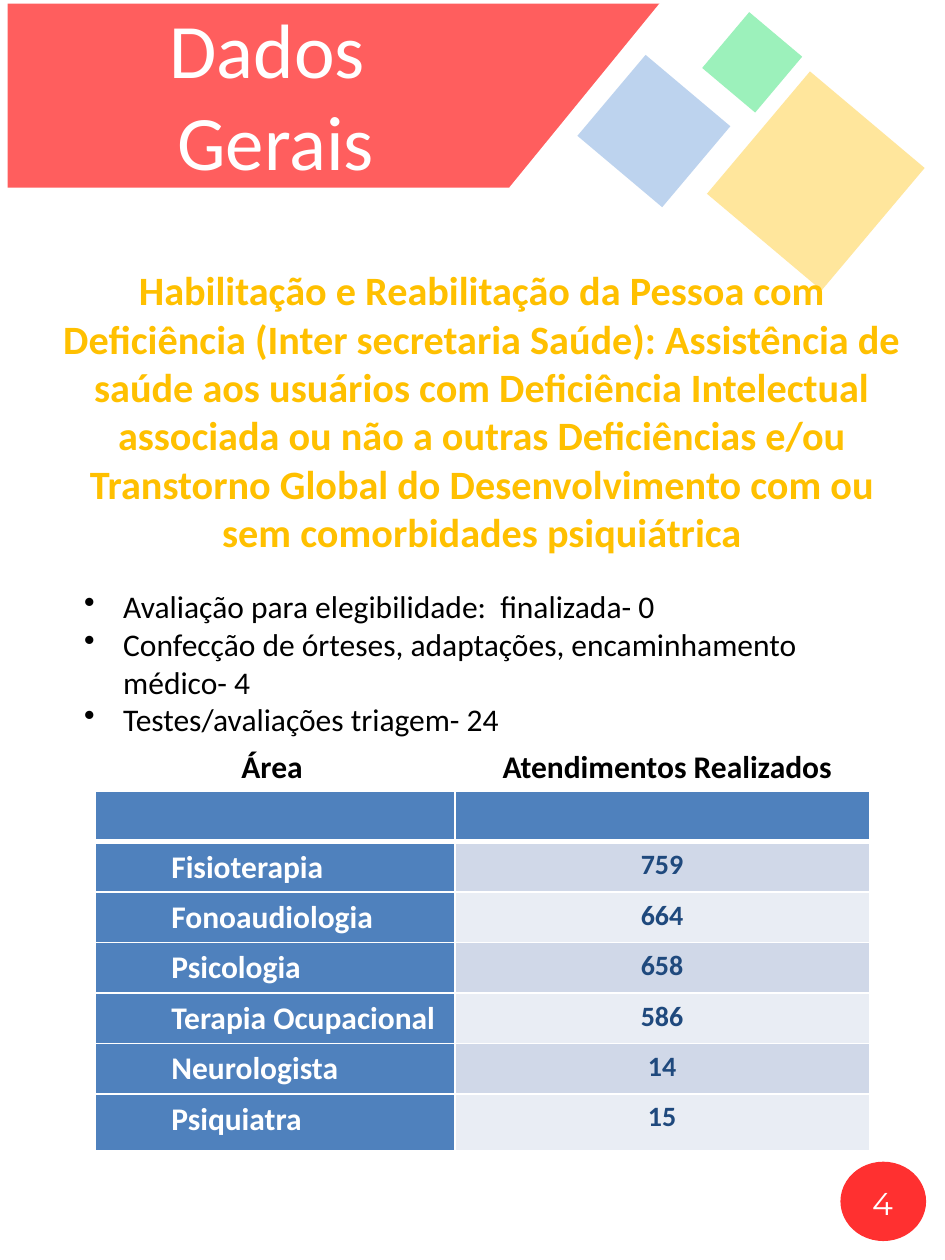
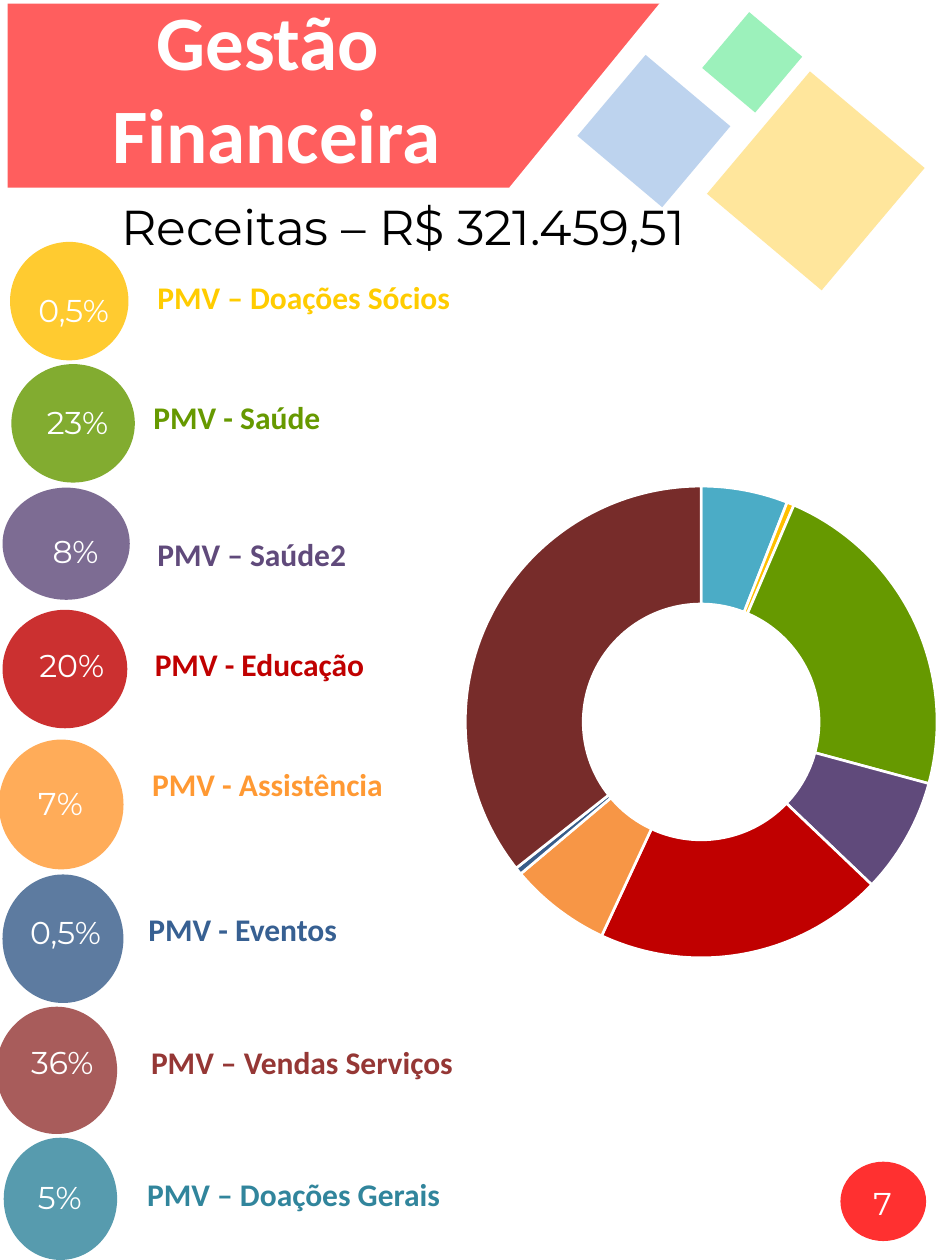
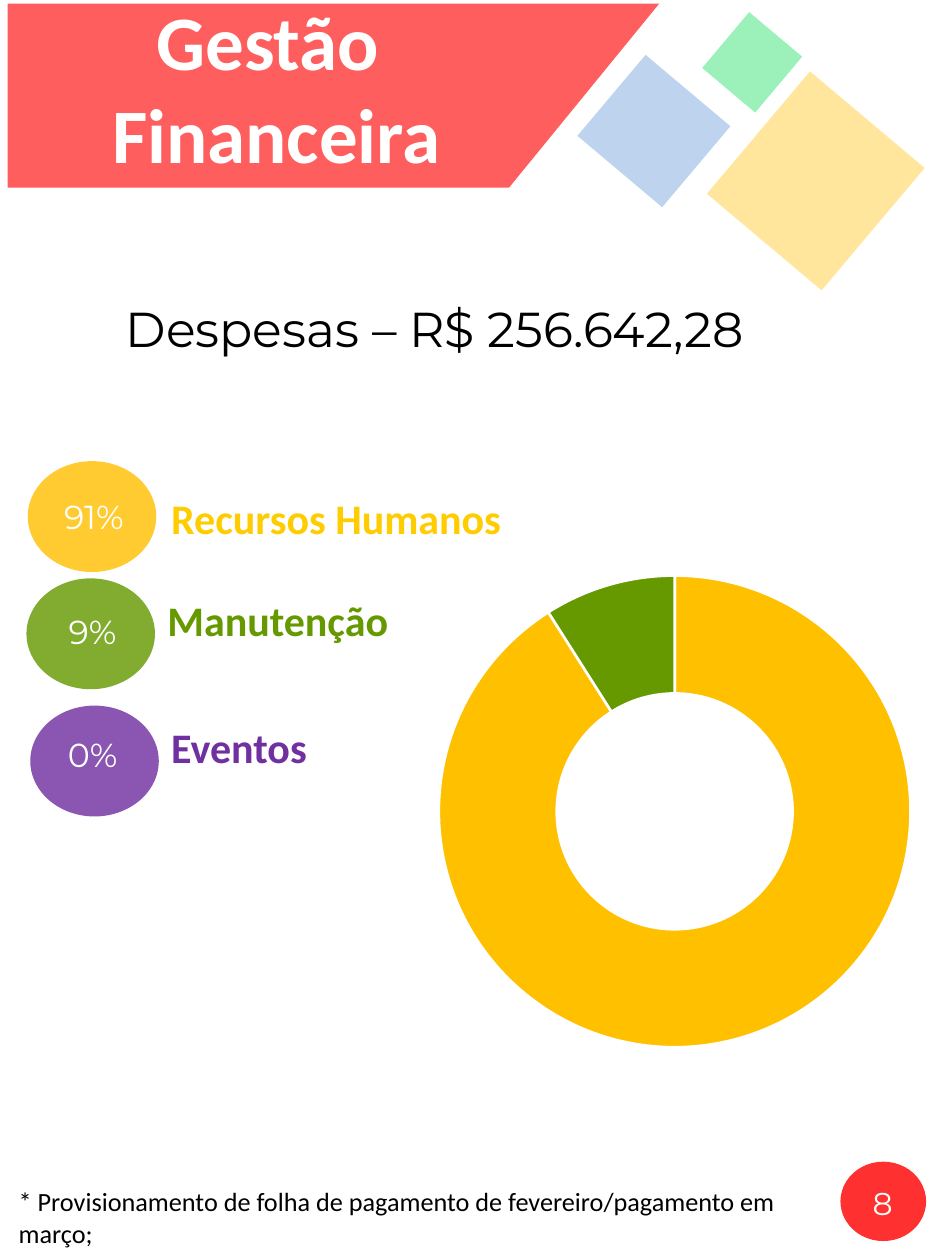
from lxml import etree
from pptx import Presentation
from pptx.chart.data import CategoryChartData
from pptx.dml.color import RGBColor
from pptx.enum.chart import XL_CHART_TYPE
from pptx.enum.shapes import MSO_SHAPE
from pptx.enum.text import MSO_ANCHOR, MSO_AUTO_SIZE, PP_ALIGN
from pptx.oxml.ns import qn
from pptx.util import Inches, Pt

RECT = MSO_SHAPE.RECTANGLE
OVAL = MSO_SHAPE.OVAL
TRIANGLE = MSO_SHAPE.RIGHT_TRIANGLE
DOUGHNUT = XL_CHART_TYPE.DOUGHNUT
LEFT, CENTER = PP_ALIGN.LEFT, PP_ALIGN.CENTER
MIDDLE = MSO_ANCHOR.MIDDLE
GROW, FIXED = MSO_AUTO_SIZE.SHAPE_TO_FIT_TEXT, MSO_AUTO_SIZE.NONE

BODY, DISPLAY = "Calibri", "Montserrat"

WHITE = RGBColor(0xFF, 0xFF, 0xFF)
BLACK = RGBColor(0, 0, 0)
RED = RGBColor(0xFF, 0, 0)
AMBER = RGBColor(0xFF, 0xC0, 0)
YELLOW = RGBColor(0xFF, 0xCC, 0)
MINT = RGBColor(0, 0xDB, 0x50)
SKY = RGBColor(0x55, 0x8E, 0xD5)
GREEN = RGBColor(0x66, 0x99, 0)
PLUM = RGBColor(0x60, 0x4A, 0x7B)
PURPLE = RGBColor(0x70, 0x30, 0xA0)
CRIMSON = RGBColor(0xC0, 0, 0)
ORANGE = RGBColor(0xFF, 0x99, 0x33)
APRICOT = RGBColor(0xF7, 0x96, 0x46)
NAVY = RGBColor(0x38, 0x5D, 0x8A)
BLUE = RGBColor(0x37, 0x60, 0x92)
BRICK = RGBColor(0x95, 0x37, 0x35)
MAROON = RGBColor(0x77, 0x2C, 0x2A)
TEAL = RGBColor(0x31, 0x85, 0x9C)
AQUA = RGBColor(0x4B, 0xAC, 0xC6)
TABLE_BLUE = RGBColor(0x4F, 0x81, 0xBD)
TABLE_TEXT = RGBColor(0x1F, 0x49, 0x7D)
BAND_DARK = RGBColor(0xD0, 0xD8, 0xE8)
BAND_LIGHT = RGBColor(0xE9, 0xED, 0xF4)

DIAMONDS = [
    ((5.84, 0.84, 1.27, 1.19), AMBER),
    ((5.68, 0.22, 0.58, 0.55), MINT),
    ((4.77, 0.6, 0.84, 0.88), SKY),
]

SERVICES = [
    ("Fisioterapia", "759"),
    ("Fonoaudiologia", "664"),
    ("Psicologia", "658"),
    ("Terapia Ocupacional", "586"),
    ("Neurologista", "14"),
    ("Psiquiatra", "15"),
]

INCOME = [
    (AMBER, (0.08, 1.92, 0.94, 0.94), "0,5%", (-0.12, 2.26, 1.41),
     "PMV – Doações Sócios", YELLOW, (1.15, 2.16, 2.55)),
    (GREEN, (0.09, 2.89, 0.98, 0.94), "23%", (0.19, 3.15, 0.85),
     "PMV - Saúde", GREEN, (1.12, 3.11, 1.54)),
    (PLUM, (0.02, 3.87, 1.01, 0.89), "8%", (-0.06, 4.17, 1.32),
     "PMV – Saúde2", PLUM, (1.15, 4.2, 1.72)),
    (CRIMSON, (0.02, 4.84, 0.99, 0.94), "20%", (0.01, 5.08, 1.12),
     "PMV - Educação", CRIMSON, (1.13, 5.07, 1.88)),
    (ORANGE, (-0.01, 5.87, 0.99, 1.03), "7%", (-0.03, 6.17, 1.02),
     "PMV - Assistência", ORANGE, (1.11, 6.02, 2.05)),
    (NAVY, (0.02, 6.94, 0.96, 1.02), "0,5%", (-0.06, 7.2, 1.16),
     "PMV - Eventos", BLUE, (1.08, 7.17, 1.71)),
    (BRICK, (-0.03, 7.99, 0.96, 1.01), "36%", (-0.07, 8.23, 1.13),
     "PMV – Vendas Serviços", BRICK, (1.1, 8.23, 2.62)),
    (TEAL, (0.03, 9.03, 0.9, 0.97), "5%", (-0.09, 9.3, 1.13),
     "PMV – Doações Gerais", TEAL, (1.07, 9.28, 2.55)),
]

EXPENSES = [
    (AMBER, (0.22, 3.66, 1.02, 0.88), "91%", (0.05, 3.89, 1.39),
     "Recursos Humanos", YELLOW, (1.26, 3.86, 2.92)),
    (GREEN, (0.21, 4.59, 1.02, 0.88), "9%", (0.17, 4.8, 1.13),
     "Manutenção", GREEN, (1.23, 4.67, 1.97)),
    (PURPLE, (0.24, 5.6, 1.02, 0.88), "0%", (0.17, 5.78, 1.13),
     "Eventos", PURPLE, (1.26, 5.68, 1.29)),
]


def inches(box):
    return [Inches(v) for v in box]


def add_shape(s, kind, box, color, alpha=None, rotation=0, outlined=False):
    sp = s.shapes.add_shape(kind, *inches(box))
    sp.shadow.inherit = False
    sp.rotation = rotation
    sp.fill.solid()
    sp.fill.fore_color.rgb = color
    if alpha:
        clr = sp._element.spPr.find(qn("a:solidFill"))[0]
        etree.SubElement(clr, qn("a:alpha")).set("val", str(alpha * 1000))
    if outlined:
        sp.line.color.rgb = color
        sp.line.width = Pt(2)
    else:
        sp.line.fill.background()


def style(p, size, color, font=BODY, bold=False, align=LEFT, margin=0):
    p.alignment = align
    p.font.size = Pt(size)
    p.font.name = font
    p.font.bold = bold
    p.font.color.rgb = color
    if margin:
        p._p.get_or_add_pPr().set("marL", str(Inches(margin)))


def add_text(s, box, lines, size, color, wrap=True, auto=GROW, **kw):
    tf = s.shapes.add_textbox(*inches(box)).text_frame
    tf.word_wrap = wrap
    tf.auto_size = auto
    for i, line in enumerate(lines):
        p = tf.paragraphs[0] if i == 0 else tf.add_paragraph()
        p.text = line
        style(p, size, color, **kw)
    return tf


def add_bullets(s, box, lines, size):
    tf = add_text(s, box, lines, size, BLACK)
    for p in tf.paragraphs:
        pPr = p._p.get_or_add_pPr()
        pPr.set("marL", str(Inches(0.31)))
        pPr.set("indent", str(-Inches(0.31)))
        bullet = etree.Element(qn("a:buChar"), char="•")
        pPr.insert(0, bullet)


def add_header(s, box, lines, bold):
    add_shape(s, RECT, (0.06, 0.03, 6.98, 1.46), RED, alpha=63)
    add_shape(s, RECT, (5.25, 0.04, 2.09, 1.46), WHITE, outlined=True)
    add_shape(s, TRIANGLE, (3.92, 0.16, 1.47, 1.2), WHITE, rotation=270, outlined=True)
    for diamond, color in DIAMONDS:
        add_shape(s, RECT, diamond, color, alpha=39, rotation=310.1)
    tf = add_text(s, box, lines, 44, WHITE, auto=FIXED, bold=bold, align=CENTER)
    tf.vertical_anchor = MIDDLE


def add_page_number(s, number):
    add_shape(s, OVAL, (6.67, 9.22, 0.68, 0.63), RED, alpha=81)
    add_text(s, (6.73, 9.35, 0.55, 0.4), [str(number)], 18, WHITE, font=DISPLAY, align=CENTER)


def add_total(s, box, text):
    add_text(s, box, [text], 28, BLACK, wrap=False, font=DISPLAY, align=CENTER)


def add_legend(s, entries, percent_size, label_size):
    for fill, oval, percent, percent_at, label, color, label_at in entries:
        add_shape(s, OVAL, oval, fill, alpha=81)
        add_text(s, (*percent_at, 0.4), [percent], percent_size, WHITE,
                 font=DISPLAY, align=CENTER)
        add_text(s, (*label_at, label_size / 60 + 0.1), [label], label_size, color,
                 wrap=False, bold=True)


def add_doughnut(s, left, top, values, colors):
    data = CategoryChartData()
    data.categories = [str(i + 1) for i in range(len(values))]
    data.add_series("Series 1", values)
    chart = s.shapes.add_chart(DOUGHNUT, *inches((left, top, 5.35, 4.02)), data).chart
    chart.has_legend = False
    chart.has_title = False
    chart.font.name = BODY
    chart.font.size = Pt(10)
    chart.font.color.rgb = BLACK
    plot = chart.plots[0]
    plot._element.find(qn("c:holeSize")).set("val", "52")
    for i, color in enumerate(colors):
        fmt = plot.series[0].points[i].format
        fmt.fill.solid()
        fmt.fill.fore_color.rgb = color
        fmt.line.color.rgb = WHITE
        fmt.line.width = Pt(1.5)


def set_borders(cell, top, bottom):
    tcPr = cell._tc.get_or_add_tcPr()
    for tag, width in (("lnL", 1), ("lnR", 1), ("lnT", top), ("lnB", bottom)):
        ln = etree.SubElement(tcPr, qn(f"a:{tag}"), w=str(Pt(width)))
        fill = etree.SubElement(ln, qn("a:solidFill"))
        etree.SubElement(fill, qn("a:srgbClr"), val=str(WHITE))


def add_services_table(s, box):
    rows = [("", "")] + SERVICES
    table = s.shapes.add_table(len(rows), 2, *inches(box)).table
    table.columns[0].width = Inches(2.85)
    table.columns[1].width = Inches(3.29)
    for r, row in enumerate(rows):
        table.rows[r].height = Inches(0.45 if row == rows[-1] else 0.4)
        band = BAND_DARK if r % 2 else BAND_LIGHT
        for c, text in enumerate(row):
            cell = table.cell(r, c)
            set_borders(cell, 3 if r == 1 else 1, 3 if r == 0 else 1)
            cell.fill.solid()
            cell.fill.fore_color.rgb = TABLE_BLUE if r == 0 or c == 0 else band
            cell.text = text
            p = cell.text_frame.paragraphs[0]
            if c == 0:
                style(p, 18, WHITE, bold=True, margin=0.5)
            else:
                style(p, 16, TABLE_TEXT, bold=True, align=CENTER)


def general_data(s):
    add_header(s, (-0.08, -0.09, 4.54, 1.67), ["Dados \nGerais"], False)
    add_page_number(s, 4)
    add_text(s, (0.31, 2.06, 7.04, 2.42), [
        "Habilitação e Reabilitação da Pessoa com Deficiência (Inter secretaria Saúde): "
        "Assistência de saúde aos usuários com Deficiência Intelectual associada ou não a "
        "outras Deficiências e/ou Transtorno Global do Desenvolvimento com ou sem "
        "comorbidades psiquiátrica"], 23, AMBER, bold=True, align=CENTER)
    add_bullets(s, (0.57, 4.61, 6.46, 1.31), [
        "Avaliação para elegibilidade:  finalizada- 0",
        "Confecção de órteses, adaptações, encaminhamento médico- 4",
        "Testes/avaliações triagem- 24"], 18)
    add_services_table(s, (0.76, 6.28, 6.14, 2.85))
    add_text(s, (3.39, 5.88, 3.34, 0.4), ["Atendimentos Realizados"], 18, BLACK,
             wrap=False, bold=True, margin=0.5)
    add_text(s, (1.31, 5.88, 1.2, 0.4), ["Área"], 18, BLACK,
             wrap=False, bold=True, align=CENTER, margin=0.5)


def finance_header(s, number):
    add_header(s, (-1.18, -0.15, 6.75, 1.67), ["Gestão ", "Financeira"], True)
    add_page_number(s, number)


def income(s):
    finance_header(s, 7)
    add_total(s, (0.4, 1.51, 5.6, 0.57), "Receitas – R$ 321.459,51")
    add_doughnut(s, 2.89, 3.72, [6, 0.5, 23, 8, 20, 7, 0.5, 36],
                 [AQUA, AMBER, GREEN, PLUM, CRIMSON, APRICOT, NAVY, MAROON])
    add_legend(s, INCOME, 18, 18)


def expenses(s):
    finance_header(s, 8)
    add_total(s, (0.56, 2.32, 5.78, 0.57), "Despesas – R$ 256.642,28")
    add_doughnut(s, 2.68, 4.43, [None, 91, 9, 0], [AQUA, AMBER, GREEN, PLUM])
    add_legend(s, EXPENSES, 19, 24)
    add_text(s, (0.05, 9.36, 6.29, 0.61), [
        "* Provisionamento de folha de pagamento de fevereiro/pagamento em março;"], 15, BLACK)


def main():
    prs = Presentation()
    prs.slide_width = Inches(7.5)
    prs.slide_height = Inches(10)
    for build in (general_data, income, expenses):
        build(prs.slides.add_slide(prs.slide_layouts[6]))
    prs.save("out.pptx")


if __name__ == "__main__":
    main()
